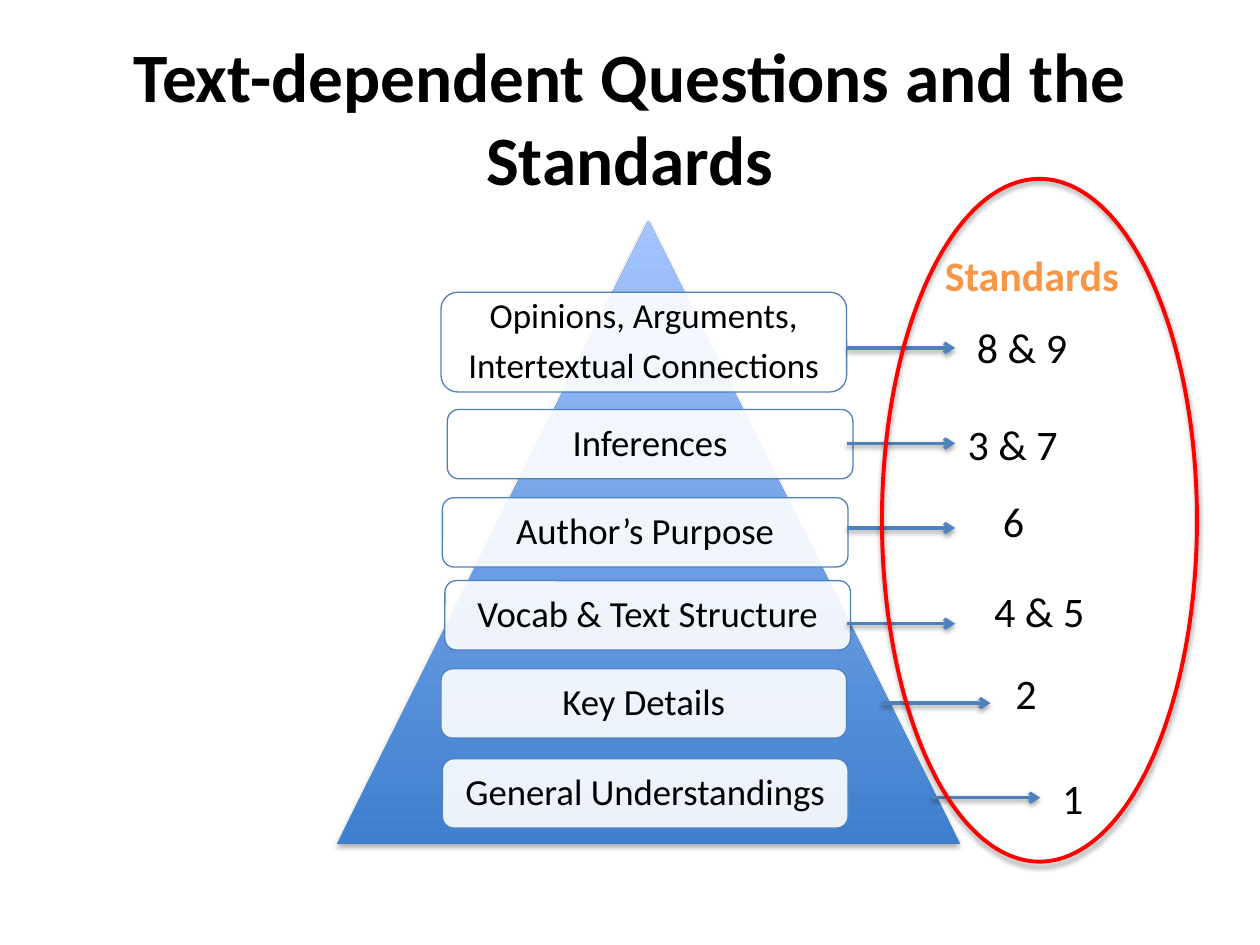
from lxml import etree
from pptx import Presentation
from pptx.dml.color import RGBColor
from pptx.enum.shapes import MSO_CONNECTOR, MSO_SHAPE
from pptx.enum.text import MSO_ANCHOR, PP_ALIGN
from pptx.oxml.ns import qn
from pptx.util import Pt

TRIANGLE = MSO_SHAPE.ISOSCELES_TRIANGLE
ROUNDED = MSO_SHAPE.ROUNDED_RECTANGLE
OVAL = MSO_SHAPE.OVAL
STRAIGHT = MSO_CONNECTOR.STRAIGHT
MIDDLE = MSO_ANCHOR.MIDDLE
LEFT, CENTER = PP_ALIGN.LEFT, PP_ALIGN.CENTER

FONT = "Calibri"
COLORS = {
    "text": "000000",
    "heading": "F79646",
    "outline": "4F81BD",
    "level": "FFFFFF",
    "base": "3F7FCE",
    "peak": "A4C4FF",
    "ring": "FF0000",
    "shadow": "000000",
}
LEVEL_WIDTH = 231.8
ARROW_LENGTH = 62
LABEL_HEIGHT = 36

LEVELS = [
    (252, 167, 57, 20, ["Opinions, Arguments,", "Intertextual Connections"]),
    (255.6, 234, 39.6, 21, ["Inferences"]),
    (252.8, 284.4, 39.6, 21, ["Author’s Purpose"]),
    (254.2, 331.8, 39.6, 21, ["Vocab & Text Structure"]),
    (252, 382.2, 39.6, 21, ["Key Details"]),
    (252.8, 433.6, 39.6, 21, ["General Understandings"]),
]
ARROWS = [
    (483.8, 198.8),
    (483.8, 253.4),
    (483.8, 301.7),
    (483.8, 356.4),
    (504, 401.8),
    (532.4, 455.8),
]
STANDARDS = [
    ("8 & 9", 551.2, 180, 72),
    ("3 & 7", 545.8, 235.4, 93.6),
    ("6", 566, 279.4, 51.8),
    ("4 & 5", 561, 331.2, 66.2),
    ("2", 573.1, 378, 58.3),
    ("1", 599.8, 437.8, 51.1),
]


def color(name):
    return RGBColor.from_string(COLORS[name])


def write(frame, lines, size, align=LEFT, tint="text", bold=False):
    for index, line in enumerate(lines):
        para = frame.paragraphs[0] if index == 0 else frame.add_paragraph()
        para.text = line
        para.alignment = align
        para.font.name = FONT
        para.font.size = Pt(size)
        para.font.bold = bold
        para.font.color.rgb = color(tint)


def add_label(page, text, left, top, width, height, size, **style):
    box = page.shapes.add_textbox(Pt(left), Pt(top), Pt(width), Pt(height))
    box.text_frame.word_wrap = True
    box.text_frame.vertical_anchor = MIDDLE
    write(box.text_frame, [text], size, **style)


def add_shadow(shape, opacity, distance):
    properties = shape.element.spPr
    effects = properties.find(qn("a:effectLst"))
    if effects is None:
        effects = etree.SubElement(properties, qn("a:effectLst"))
    shadow = etree.SubElement(
        effects, qn("a:outerShdw"), blurRad=str(Pt(3.1)),
        dist=str(Pt(distance)), dir="5400000", rotWithShape="0")
    tint = etree.SubElement(shadow, qn("a:srgbClr"), val=COLORS["shadow"])
    etree.SubElement(tint, qn("a:alpha"), val=str(opacity * 1000))


def add_preset(page, kind, left, top, width, height):
    shape = page.shapes.add_shape(kind, Pt(left), Pt(top), Pt(width), Pt(height))
    shape.shadow.inherit = False
    return shape


def add_pyramid(page):
    pyramid = add_preset(page, TRIANGLE, 192.4, 126, 356.4, 356.4)
    pyramid.fill.gradient()
    pyramid.fill.gradient_angle = 90
    for stop, name in zip(pyramid.fill.gradient_stops, ("base", "peak")):
        stop.color.rgb = color(name)
    pyramid.line.fill.background()
    add_shadow(pyramid, 35, 1.8)


def add_level(page, left, top, height, size, lines):
    level = add_preset(page, ROUNDED, left, top, LEVEL_WIDTH, height)
    level.fill.solid()
    level.fill.fore_color.rgb = color("level")
    tint = level.element.spPr.find(qn("a:solidFill")).find(qn("a:srgbClr"))
    etree.SubElement(tint, qn("a:alpha"), val="90000")
    level.line.color.rgb = color("outline")
    level.line.width = Pt(0.75)
    frame = level.text_frame
    frame.word_wrap = True
    frame.vertical_anchor = MIDDLE
    frame.margin_left = frame.margin_right = Pt(8)
    frame.margin_top = frame.margin_bottom = Pt(6)
    write(frame, lines, size, CENTER)
    for para in frame.paragraphs:
        para.line_spacing = 0.9
    for para in frame.paragraphs[:-1]:
        para.space_after = Pt(7)


def add_arrow(page, left, top):
    arrow = page.shapes.add_connector(
        STRAIGHT, Pt(left), Pt(top), Pt(left + ARROW_LENGTH), Pt(top))
    arrow.line.color.rgb = color("outline")
    arrow.line.width = Pt(2)
    outline = arrow.element.spPr.find(qn("a:ln"))
    etree.SubElement(outline, qn("a:tailEnd"), type="arrow")
    add_shadow(arrow, 38, 1.6)


def add_ring(page):
    ring = add_preset(page, OVAL, 504, 102.2, 180, 390.2)
    ring.fill.background()
    ring.line.color.rgb = color("ring")
    ring.line.width = Pt(2.25)
    add_shadow(ring, 35, 1.8)


def main():
    deck = Presentation()
    deck.slide_width, deck.slide_height = Pt(720), Pt(540)
    page = deck.slides.add_slide(deck.slide_layouts[6])
    add_label(page, "Text-dependent Questions and the Standards",
              36, 21.6, 648, 90, 39.6, align=CENTER, bold=True)
    add_pyramid(page)
    for level in LEVELS:
        add_level(page, *level)
    for arrow in ARROWS:
        add_arrow(page, *arrow)
    for text, left, top, width in STANDARDS:
        add_label(page, text, left, top, width, LABEL_HEIGHT, 24)
    add_label(page, "Standards", 532.8, 139, 116, LABEL_HEIGHT, 24,
              tint="heading", bold=True)
    add_ring(page)
    deck.save("out.pptx")


if __name__ == "__main__":
    main()
